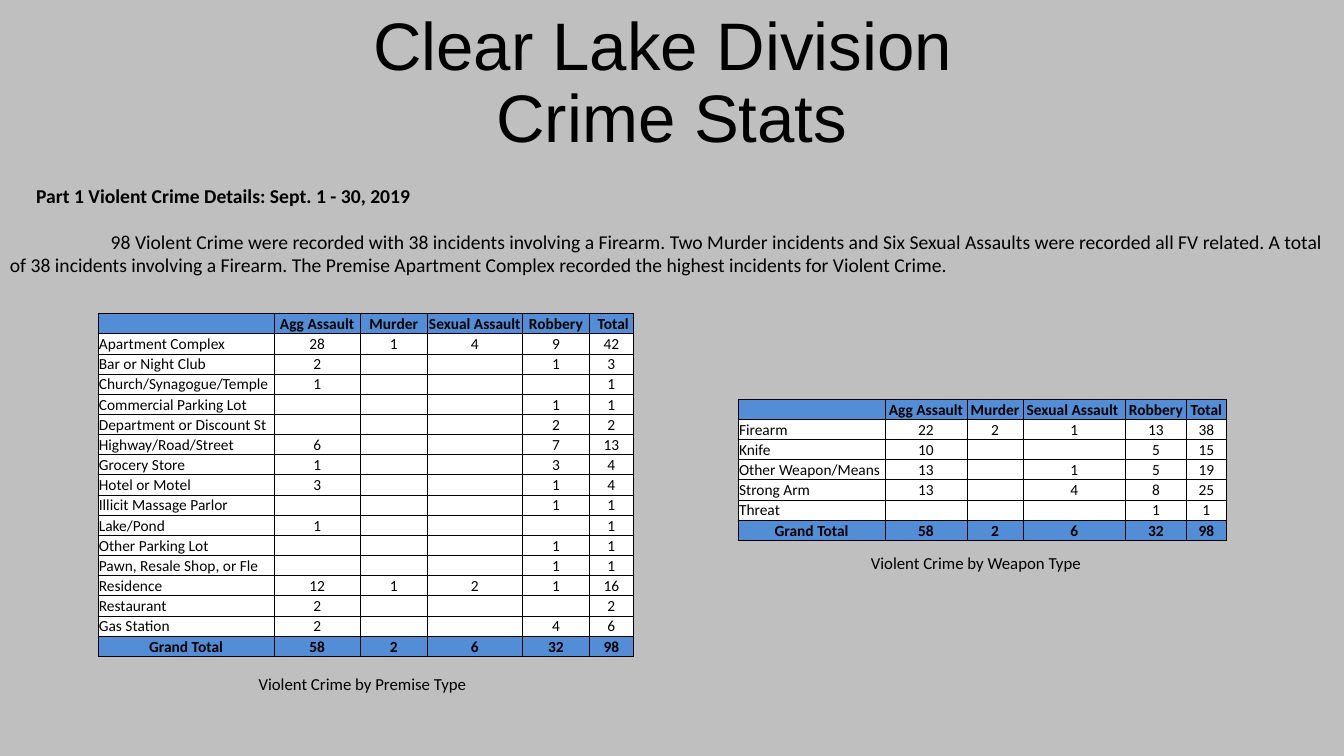
"""Build the Clear Lake Division crime statistics slide."""
from lxml.etree import SubElement as Sub
from pptx import Presentation
from pptx.dml.color import RGBColor as RGB
from pptx.enum.text import MSO_ANCHOR as Anchor, MSO_AUTO_SIZE as Auto, PP_ALIGN as Align
from pptx.oxml.ns import qn
from pptx.util import Inches, Pt

THEME = {
    "page": RGB.from_string("BFBFBF"), "band": RGB.from_string("538DD5"),
    "cell": RGB.from_string("FFFFFF"), "ink": RGB.from_string("000000"),
    "head": "Arial", "body": "Calibri",
    "title": Pt(48), "text": Pt(14), "note": Pt(12), "grid": Pt(11), "rule": Pt(0.5),
}
ROW = 2.67

deck = Presentation()
deck.slide_width, deck.slide_height = Inches(13.33), Inches(7.5)
wide, high = deck.slide_width / 100, deck.slide_height / 100
slide = deck.slides.add_slide(deck.slide_layouts[5])
slide.background.fill.solid()
slide.background.fill.fore_color.rgb = THEME["page"]


def place(x, y, w, h):
    """Turn percentages of the slide into lengths."""
    return int(x * wide), int(y * high), int(w * wide), int(h * high)


def write(para, text, size, bold=False, align=Align.LEFT, face="body"):
    """Fill a paragraph and format its text."""
    para.text, para.alignment = text, align
    look = {"name": THEME[face], "size": THEME[size], "bold": bold}
    for run in para.runs:
        for key, val in look.items():
            setattr(run.font, key, val)
        run.font.color.rgb = THEME["ink"]


title = slide.shapes.title
title.left, title.top, title.width, title.height = place(0, 0, 100, 21.47)
frame = title.text_frame
frame.auto_size, frame.vertical_anchor = Auto.NONE, Anchor.BOTTOM
write(frame.paragraphs[0], "Clear Lake Division \vCrime Stats", "title",
      align=Align.CENTER, face="head")
frame.paragraphs[0].line_spacing = 0.9

story = (
    "98 Violent Crime were recorded with 38 incidents involving a Firearm. "
    "Two Murder incidents and Six Sexual Assaults were recorded all FV related. "
    "A total of 38 incidents involving a Firearm. "
    "The Premise Apartment Complex recorded the highest incidents for Violent Crime."
)
notes = [
    ((0, 29.73, 100, 7.6), story, "text", False, Align.LEFT, Inches(1)),
    ((1.95, 23.73, 32.78, 4.53), "Part 1 Violent Crime Details: Sept. 1 - 30, 2019",
     "text", True, Align.LEFT, 0),
    ((62.79, 72.4, 19.65, 4), "Violent Crime by Weapon Type", "note", False, Align.CENTER, 0),
    ((16.28, 88.4, 21.38, 4), "Violent Crime by Premise Type", "note", False, Align.CENTER, 0),
]
for spot, text, size, bold, align, indent in notes:
    frame = slide.shapes.add_textbox(*place(*spot)).text_frame
    frame.word_wrap = True
    para = frame.paragraphs[0]
    write(para, text, size, bold, align)
    if indent:
        para._p.get_or_add_pPr().set("indent", str(indent))

total = ("Grand Total", 58, 2, 6, 32, 98)
premise = [
    ("", "Agg Assault", "Murder", "Sexual Assault", "Robbery", " Total"),
    ("Apartment Complex", 28, 1, 4, 9, 42),
    ("Bar or Night Club", 2, "", "", 1, 3),
    ("Church/Synagogue/Temple", 1, "", "", "", 1),
    ("Commercial Parking Lot", "", "", "", 1, 1),
    ("Department or Discount St", "", "", "", 2, 2),
    ("Highway/Road/Street", 6, "", "", 7, 13),
    ("Grocery Store", 1, "", "", 3, 4),
    ("Hotel or Motel", 3, "", "", 1, 4),
    ("Illicit Massage Parlor", "", "", "", 1, 1),
    ("Lake/Pond", 1, "", "", "", 1),
    ("Other Parking Lot", "", "", "", 1, 1),
    ("Pawn, Resale Shop, or Fle", "", "", "", 1, 1),
    ("Residence", 12, 1, 2, 1, 16),
    ("Restaurant", 2, "", "", "", 2),
    ("Gas Station", 2, "", "", 4, 6),
    total,
]
weapon = [
    ("", "Agg Assault", "Murder", "Sexual Assault ", "Robbery", "Total"),
    ("Firearm", 22, 2, 1, 13, 38),
    ("Knife", 10, "", "", 5, 15),
    ("Other Weapon/Means", 13, "", 1, 5, 19),
    ("Strong Arm", 13, "", 4, 8, 25),
    ("Threat", "", "", "", 1, 1),
    total,
]
grids = [
    (7.28, 41.47, (13.13, 6.38, 5.03, 7.03, 5.03, 3.23), premise),
    (54.91, 52.8, (10.95, 6.08, 4.2, 7.58, 4.58, 2.93), weapon),
]
form = {
    "vertical_anchor": Anchor.BOTTOM, "margin_left": Inches(0.01),
    "margin_right": Inches(0.01), "margin_top": Inches(0.01), "margin_bottom": 0,
}
for left, top, cols, data in grids:
    spot = place(left, top, sum(cols), ROW * len(data))
    table = slide.shapes.add_table(len(data), len(cols), *spot).table
    table.horz_banding = False
    for col, share in zip(table.columns, cols):
        col.width = int(share * wide)
    for r, line in enumerate(data):
        table.rows[r].height = int(ROW * high)
        band = r in (0, len(data) - 1)
        for c, value in enumerate(line):
            cell = table.cell(r, c)
            for key, val in form.items():
                setattr(cell, key, val)
            para = cell.text_frame.paragraphs[0]
            align = Align.CENTER if band or c else Align.LEFT
            write(para, str(value), "grid", band, align)
            if value == "":
                Sub(para._p, qn("a:endParaRPr"), sz=str(int(THEME["grid"].pt * 100)))
            props = cell._tc.get_or_add_tcPr()
            for side in "LRTB":
                edge = Sub(props, qn(f"a:ln{side}"), w=str(THEME["rule"]))
                Sub(Sub(edge, qn("a:solidFill")), qn("a:srgbClr"), val=str(THEME["ink"]))
            cell.fill.solid()
            cell.fill.fore_color.rgb = THEME["band" if band else "cell"]

deck.save("out.pptx")
